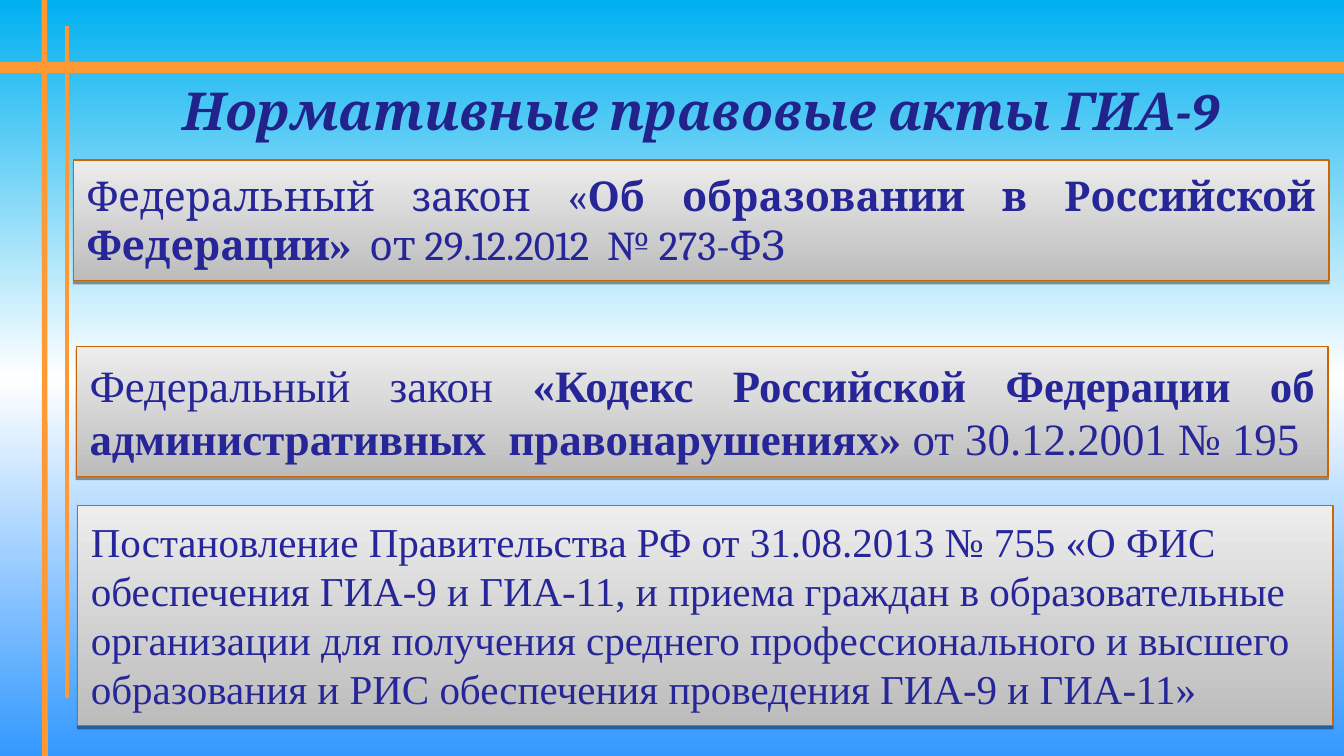
import copy
from typing import NamedTuple

import pptx
import pptx.dml.color
import pptx.enum.shapes
import pptx.enum.text
import pptx.oxml
import pptx.oxml.ns
import pptx.util

Pt = pptx.util.Pt
ALIGN = pptx.enum.text.PP_ALIGN
ANCHOR = pptx.enum.text.MSO_ANCHOR
COLORS = {
    "sky": "00B0F0", "white": "FFFFFF", "blue": "3399FF",
    "orange": "FF9933", "rust": "CC6600", "dark": "BCBCBC",
    "light": "EDEDED", "title": "22228B", "text": "262699",
}
NS = pptx.oxml.ns.nsdecls("a")
SHADOW = (f'<a:effectLst {NS}><a:outerShdw blurRad="0" dist="{Pt(1.6)}" dir="5400000" '
          'rotWithShape="0"><a:srgbClr val="000000"><a:alpha val="38000"/>'
          '</a:srgbClr></a:outerShdw></a:effectLst>')


class Area(NamedTuple):
    """Left, top, width and height in percent of the slide."""
    left: float
    top: float
    width: float
    height: float


class Rule(NamedTuple):
    """Line ends in percent of the slide, and weight in points."""
    ends: tuple[float, float, float, float]
    weight: float


class Run(NamedTuple):
    text: str
    bold: bool = False
    size: float | None = None


class Card(NamedTuple):
    area: Area
    runs: list[Run]
    size: float
    font: str
    align: ALIGN
    after: float = 0


RULES = [
    Rule((0, 8.89, 100, 8.89), 6),
    Rule((3.3, 0, 3.35, 100), 3),
    Rule((5, 3.38, 5, 92.27), 2.25),
]
CARDS = [
    Card(Area(5.48, 21.16, 93.4, 16), [
        Run("Федеральный закон «"),
        Run("Об образовании в Российской Федерации»", True),
        Run("  от 29.12.2012  № 273-ФЗ"),
    ], 22, "Cambria", ALIGN.JUSTIFY),
    Card(Area(5.78, 66.84, 93.4, 29.16), [
        Run("Постановление Правительства РФ от 31.08.2013 № 755 «О ФИС обеспечения "
            "ГИА-9 и ГИА-11, и приема граждан в образовательные организации для "
            "получения среднего профессионального и высшего образования и РИС "
            "обеспечения проведения ГИА-9 и ГИА-11»"),
    ], 22, "Times New Roman", ALIGN.LEFT),
    Card(Area(5.68, 45.83, 93.15, 17.2), [
        Run("Федеральный закон "),
        Run("«Кодекс Российской Федерации об административных  правонарушениях» ", True),
        Run("от 30.12.2001 № 195"),
        Run(" ", size=20),
    ], 24, "Times New Roman", ALIGN.JUSTIFY, 30),
]

deck = pptx.Presentation()
deck.slide_width = pptx.util.Inches(10)
deck.slide_height = deck.slide_width * 9 // 16
slide = deck.slides.add_slide(deck.slide_layouts[6])


def rgb(name: str) -> pptx.dml.color.RGBColor:
    return pptx.dml.color.RGBColor.from_string(COLORS[name])


def place(area: tuple[float, ...]) -> list[int]:
    """Turn x, y pairs of percents into slide lengths."""
    sides = (deck.slide_width, deck.slide_height) * 2
    return [round(side * share / 100) for side, share in zip(sides, area)]


def blend(fill, names: list[str], angle: float) -> None:
    """Fill with evenly spaced colours."""
    fill.gradient()
    fill.gradient_angle = angle
    first = fill.gradient_stops[0]._gs
    for _ in names[2:]:
        first.addnext(copy.deepcopy(first))
    for i, (stop, name) in enumerate(zip(fill.gradient_stops, names)):
        stop.color.rgb = rgb(name)
        stop.position = i / (len(names) - 1)


def write(shape, runs: list[Run], *, size: float, font: str, color: str,
          align: ALIGN, anchor: ANCHOR = ANCHOR.TOP, pad: float = 0.05,
          italic: bool = False, after: float = 0) -> None:
    frame = shape.text_frame
    frame.word_wrap = True
    frame.vertical_anchor = anchor
    frame.margin_left = frame.margin_right = pptx.util.Inches(0.1)
    frame.margin_top = frame.margin_bottom = pptx.util.Inches(pad)
    para = frame.paragraphs[0]
    para.alignment = align
    if after:
        para.space_after = Pt(after)
    for item in runs:
        run = para.add_run()
        run.text = item.text
        run.font.name = font
        run.font.size = Pt(item.size or size)
        run.font.bold = item.bold
        run.font.italic = italic
        run.font.color.rgb = rgb(color)


def draw_rule(rule: Rule) -> None:
    line = slide.shapes.add_connector(
        pptx.enum.shapes.MSO_CONNECTOR.STRAIGHT, *place(rule.ends))
    line.line.color.rgb = rgb("orange")
    line.line.width = Pt(rule.weight)
    line._element.spPr.append(pptx.oxml.parse_xml(f"<a:effectLst {NS}/>"))


def draw_card(card: Card) -> None:
    box = slide.shapes.add_shape(
        pptx.enum.shapes.MSO_SHAPE.RECTANGLE, *place(card.area))
    blend(box.fill, ["dark", "light"], 90)
    box.line.color.rgb = rgb("rust")
    box.line.width = Pt(0.75)
    box._element.spPr.append(pptx.oxml.parse_xml(SHADOW))
    write(box, card.runs, size=card.size, font=card.font, color="text",
          align=card.align, pad=0.08, after=card.after)
    box.text_frame.auto_size = pptx.enum.text.MSO_AUTO_SIZE.SHAPE_TO_FIT_TEXT


# Background and crossing lines
blend(slide.background.fill, ["sky", "white", "blue"], 270)
for rule in RULES:
    draw_rule(rule)

# Title
title = slide.shapes.add_textbox(*place(Area(6.7, 10.31, 90.9, 8.36)))
write(title, [Run("Нормативные правовые акты ГИА-9", True)], size=28,
      font="Cambria", color="title", align=ALIGN.CENTER,
      anchor=ANCHOR.MIDDLE, italic=True)

# Legal acts
for card in CARDS:
    draw_card(card)

deck.save("out.pptx")
